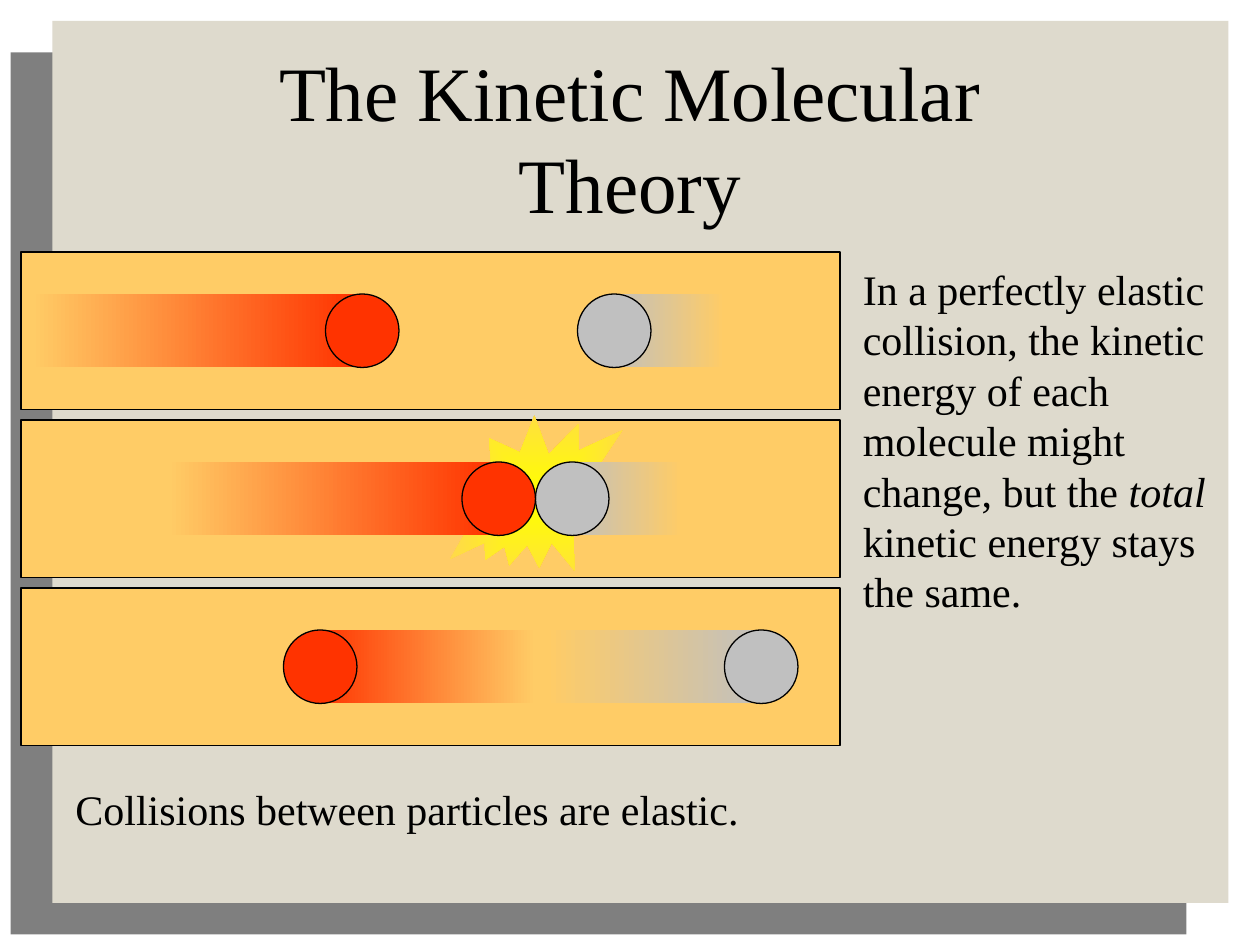
from lxml import etree
from pptx import Presentation
from pptx.dml.color import RGBColor
from pptx.enum import shapes, text
from pptx.oxml.ns import qn
from pptx.util import Pt

BLACK = RGBColor(0x00, 0x00, 0x00)
PAPER = RGBColor(0xDE, 0xDA, 0xCD)
AMBER = RGBColor(0xFF, 0xCC, 0x66)
RED = RGBColor(0xFF, 0x33, 0x00)
GREY = RGBColor(0xC0, 0xC0, 0xC0)
YELLOW = RGBColor(0xFF, 0xFF, 0x00)

KIND = shapes.MSO_SHAPE
BALL = 42  # diameter of a particle
INSET = 24  # from the top of a lane to its particles


class Page:
    font = "Times New Roman"

    def __init__(self, slide):
        self.slide = slide

    def shape(self, kind, x, y, w, h, fill=None, edge=False):
        item = self.slide.shapes.add_shape(kind, Pt(x), Pt(y), Pt(w), Pt(h))
        item.shadow.inherit = False
        if fill is not None:
            item.fill.solid()
            item.fill.fore_color.rgb = fill
        if edge:
            item.line.color.rgb = BLACK
            item.line.width = Pt(0.75)
        else:
            item.line.fill.background()
        return item

    def blend(self, item, start, end):
        """Fill a shape with a gradient from left to right."""
        item.fill.gradient()
        item.fill.gradient_angle = 0
        for stop, color, place in zip(item.fill.gradient_stops, (start, end), (0, 1)):
            stop.color.rgb = color
            stop.position = place

    def shade(self, x, y, w, h):
        """Draw a black panel at half opacity."""
        item = self.shape(KIND.RECTANGLE, x, y, w, h, BLACK)
        color = item.element.spPr.find(qn("a:solidFill"))[0]
        etree.SubElement(color, qn("a:alpha"), val="50000")

    def lane(self, y):
        self.shape(KIND.RECTANGLE, 12, y, 468, 90, AMBER, edge=True)

    def ball(self, x, lane, color, trail, length):
        """Draw a particle at x with a trail that fades away from it."""
        y = lane + INSET
        tail = self.shape(KIND.RECTANGLE, trail, y, length, BALL)
        ends = (AMBER, color) if trail < x else (color, AMBER)
        self.blend(tail, *ends)
        self.shape(KIND.OVAL, x, y, BALL, BALL, color, edge=True)

    def burst(self, x, y, w, h, turn):
        item = self.shape(KIND.EXPLOSION2, x, y, w, h)
        item.rotation = turn
        self.blend(item, YELLOW, AMBER)
        grad = item.element.spPr.find(qn("a:gradFill"))
        grad.remove(grad.find(qn("a:lin")))
        path = etree.SubElement(grad, qn("a:path"), path="shape")
        etree.SubElement(path, qn("a:fillToRect"), l="50000", t="50000", r="50000", b="50000")

    def style(self, para, size):
        para.font.name = self.font
        para.font.size = Pt(size)
        para.font.color.rgb = BLACK

    def title(self, words, x, y, w, h):
        item = self.slide.shapes.title
        item.left, item.top, item.width, item.height = Pt(x), Pt(y), Pt(w), Pt(h)
        frame = item.text_frame
        frame.text = words
        frame.auto_size = text.MSO_AUTO_SIZE.NONE
        frame.vertical_anchor = text.MSO_ANCHOR.MIDDLE
        para = frame.paragraphs[0]
        para.alignment = text.PP_ALIGN.CENTER
        self.style(para, 44)
        # Bring the title in front of the panels drawn so far.
        item.element.getparent().append(item.element)

    def note(self, x, y, w, h, *parts):
        """Write one paragraph; every second part is italic."""
        frame = self.slide.shapes.add_textbox(Pt(x), Pt(y), Pt(w), Pt(h)).text_frame
        frame.word_wrap = True
        para = frame.paragraphs[0]
        self.style(para, 24)
        for i, part in enumerate(parts):
            run = para.add_run()
            run.text = part
            if i % 2:
                run.font.italic = True


def main():
    deck = Presentation()
    deck.slide_width, deck.slide_height = Pt(720), Pt(540)
    page = Page(deck.slides.add_slide(deck.slide_layouts[5]))

    page.shade(6, 30, 672, 504)
    page.shape(KIND.RECTANGLE, 30, 12, 672, 504, PAPER)
    page.title("The Kinetic Molecular Theory", 84, 48, 552, 60)
    page.note(36, 444, 414, 36, "Collisions between particles are elastic.")
    page.note(
        486, 147, 222, 209,
        "In a perfectly elastic collision, the kinetic energy of each "
        "molecule might change, but the ",
        "total",
        " kinetic energy stays the same.",
    )

    before, impact, after = (144 + 96 * i for i in range(3))

    page.lane(before)
    page.ball(186, before, RED, 18, 186)
    page.ball(330, before, GREY, 348, 66)

    page.lane(impact)
    page.burst(260.6, 228, 99, 114, 31.6)
    page.ball(306, impact, GREY, 324, 66)
    page.ball(264, impact, RED, 96, 186)

    page.lane(after)
    page.ball(414, after, GREY, 312, 126)
    page.ball(162, after, RED, 180, 126)

    deck.save("out.pptx")


if __name__ == "__main__":
    main()
